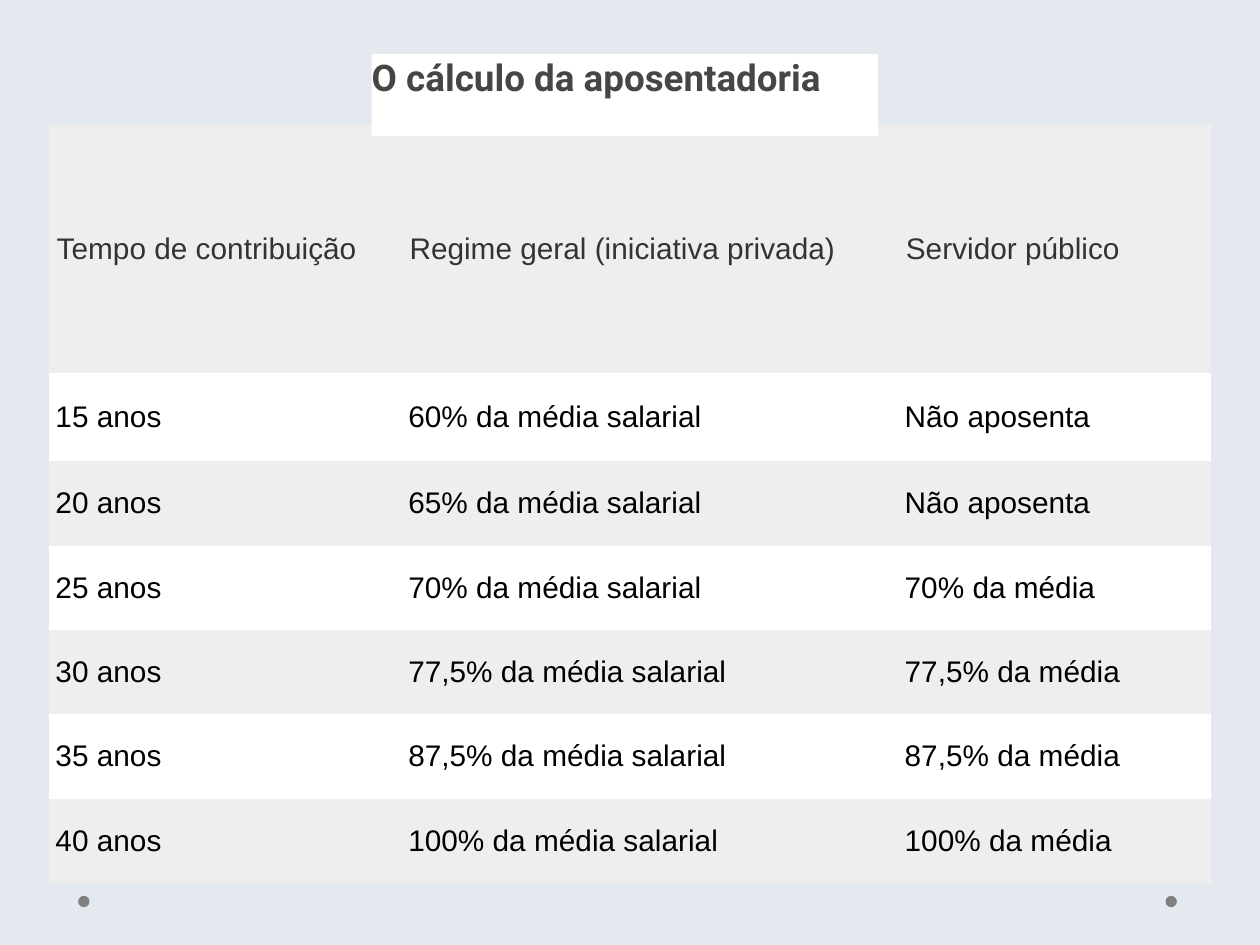
from dataclasses import dataclass

from pptx import Presentation
from pptx.dml.color import RGBColor
from pptx.enum.shapes import MSO_SHAPE
from pptx.enum.text import MSO_ANCHOR, MSO_AUTO_SIZE, PP_ALIGN
from pptx.oxml.ns import qn
from pptx.util import Inches, Pt

COLORS = {
    "background": "E4E9EF",
    "dot": "808080",
    "band": "EEEEEE",
    "white": "FFFFFF",
    "header_text": "333333",
    "body_text": "000000",
    "title": "464646",
}
NO_STYLE_NO_GRID = "{2D5ABB26-0587-4C30-8999-92F81FD0307C}"
COLUMN_WIDTHS = (2.8, 3.94, 2.48)
ROW_HEIGHTS = (1.97, 0.7) + (0.67,) * 5


@dataclass
class RetirementRule:
    contribution: str
    general_scheme: str
    public_servant: str

    def texts(self) -> tuple:
        return self.contribution, self.general_scheme, self.public_servant


RULES = [
    RetirementRule("Tempo de contribuição", "Regime geral (iniciativa privada)", "Servidor público"),
    RetirementRule("15 anos", "60% da média salarial", "Não aposenta"),
    RetirementRule("20 anos", "65% da média salarial", "Não aposenta"),
    RetirementRule("25 anos", "70% da média salarial", "70% da média"),
    RetirementRule("30 anos", "77,5% da média salarial", "77,5% da média"),
    RetirementRule("35 anos", "87,5% da média salarial", "87,5% da média"),
    RetirementRule("40 anos", "100% da média salarial", "100% da média"),
]


def paint(fill, color: str) -> None:
    fill.solid()
    fill.fore_color.rgb = RGBColor.from_string(COLORS[color])


def style_font(font, name: str, size: float, color: str, bold: bool = False) -> None:
    font.name = name
    font.size = Pt(size)
    font.bold = bold
    font.color.rgb = RGBColor.from_string(COLORS[color])


def add_dot(slide, left: float) -> None:
    dot = slide.shapes.add_shape(
        MSO_SHAPE.OVAL, Inches(left), Inches(7.11), Inches(0.09), Inches(0.09)
    )
    dot.shadow.inherit = False
    paint(dot.fill, "dot")
    dot.line.fill.background()


def fill_cell(cell, text: str, row: int) -> None:
    is_header = row == 0
    cell.text = text
    cell.vertical_anchor = MSO_ANCHOR.MIDDLE
    cell.margin_left = Inches(0.06 if is_header else 0.05)
    cell.margin_right = Inches(0.14 if is_header else 0.05)
    cell.margin_top = cell.margin_bottom = Inches(0.05)
    paint(cell.fill, "white" if row % 2 else "band")
    style_font(cell.text_frame.paragraphs[0].font, "Arial", 17,
               "header_text" if is_header else "body_text")


def add_rules_table(slide, rules: list[RetirementRule]) -> None:
    frame = slide.shapes.add_table(
        len(rules), len(COLUMN_WIDTHS), Inches(0.39), Inches(0.99),
        Inches(sum(COLUMN_WIDTHS)), Inches(sum(ROW_HEIGHTS)),
    )
    for style_id in frame.element.iter(qn("a:tableStyleId")):
        style_id.text = NO_STYLE_NO_GRID
    table = frame.table
    for column, width in zip(table.columns, COLUMN_WIDTHS):
        column.width = Inches(width)
    for row, (rule, height) in enumerate(zip(rules, ROW_HEIGHTS)):
        table.rows[row].height = Inches(height)
        for column, text in enumerate(rule.texts()):
            fill_cell(table.cell(row, column), text, row)


def place_title(slide, text: str) -> None:
    title = slide.shapes.title
    title.left, title.top = Inches(2.95), Inches(0.43)
    title.width, title.height = Inches(4.02), Inches(0.65)
    paint(title.fill, "white")
    frame = title.text_frame
    frame.text = text
    frame.word_wrap = True
    frame.auto_size = MSO_AUTO_SIZE.NONE
    frame.vertical_anchor = MSO_ANCHOR.MIDDLE
    frame.margin_left = frame.margin_top = frame.margin_right = 0
    frame.margin_bottom = Inches(0.29)
    heading = frame.paragraphs[0]
    heading.alignment = PP_ALIGN.LEFT
    style_font(heading.font, "Roboto", 21, "title", bold=True)
    # The title overlaps the table, so it moves to the front
    title.element.getparent().append(title.element)


def main() -> None:
    presentation = Presentation()
    presentation.slide_width, presentation.slide_height = Inches(10), Inches(7.5)
    slide = presentation.slides.add_slide(presentation.slide_layouts[5])
    paint(slide.background.fill, "background")

    # Footer dots
    for left in (9.25, 0.62):
        add_dot(slide, left)

    # Table and heading
    add_rules_table(slide, RULES)
    place_title(slide, "O cálculo da aposentadoria")
    presentation.save("out.pptx")


if __name__ == "__main__":
    main()
